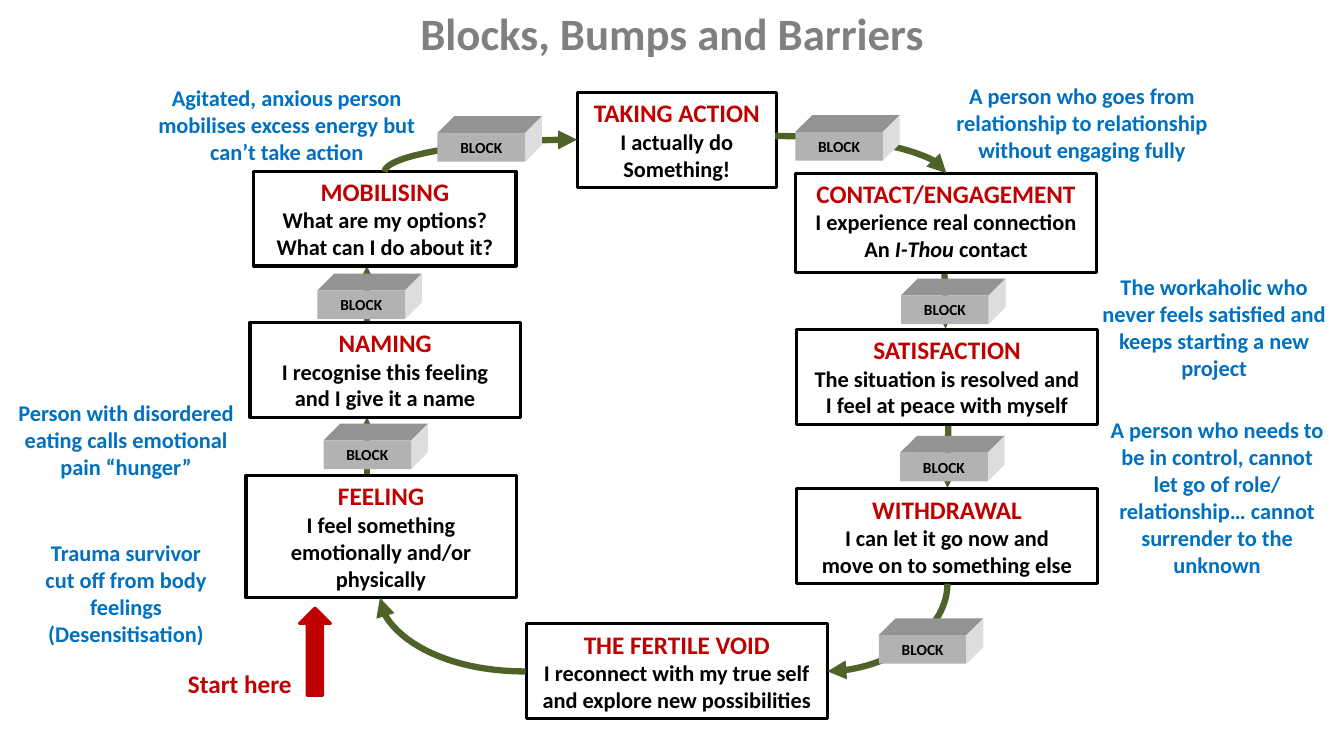
import pptx
import pptx.util
import pptx.dml.color
import pptx.enum.shapes
import pptx.enum.text
import pptx.oxml
import pptx.oxml.ns

Pt = pptx.util.Pt
SHAPE = pptx.enum.shapes.MSO_SHAPE
LINK = pptx.enum.shapes.MSO_CONNECTOR
ALIGN = pptx.enum.text.PP_ALIGN
ANCHOR = pptx.enum.text.MSO_ANCHOR
NO_FIT = pptx.enum.text.MSO_AUTO_SIZE.NONE

RED, BLUE, GREEN, GREY, BLACK, WHITE = "C00000", "0070C0", "4F6228", "808080", "000000", "FFFFFF"
FRONT, TOP, SIDE = "B2B2B2", "939393", "DDDDDD"

TITLE = "Blocks, Bumps and Barriers"
STAGES = [
    ((375.8, 445.7, 215.3, 67.7), "THE FERTILE VOID",
     [("I reconnect with my true self",), ("and explore new possibilities",)]),
    ((175.7, 339.8, 193, 87.1), "FEELING", [("I feel something emotionally and/or physically",)]),
    ((178.6, 230.4, 193, 67.7), "NAMING", [("I recognise this feeling",), ("and I give it a name",)]),
    ((181.4, 122.4, 187.2, 67.7), "MOBILISING", [("What are my options?",), ("What can I do about it?",)]),
    ((412.6, 66.2, 141.8, 67.7), "TAKING ACTION", [("I actually do",), ("Something!",)]),
    ((568.1, 123.8, 215.3, 70.6), "CONTACT/ENGAGEMENT",
     [("I experience real connection",), ("An ", "I-Thou ", "contact")]),
    ((568.8, 235.4, 215.3, 67.7), "SATISFACTION",
     [("The situation is resolved and",), ("I feel at peace with myself",)]),
    ((568.8, 349.2, 215.3, 67.7), "WITHDRAWAL",
     [("I can let it go now and",), ("move on to something else",)]),
]
EXAMPLES = [
    ((2.2, 381.6, 175.7, 85), ["Trauma survivor", "cut off from body feelings", "(Desensitisation)"]),
    ((2.2, 281.5, 175.7, 65.5), ["Person with disordered eating calls emotional pain “hunger”"]),
    ((96.5, 56.9, 216.7, 65.5), ["Agitated, anxious person mobilises excess energy but can’t take action"]),
    ((669.6, 55.4, 206.6, 65.5), ["A person who goes from relationship to relationship without engaging fully"]),
    ((776.9, 191.5, 180.7, 85), ["The workaholic who never feels satisfied and keeps starting a new project"]),
    ((785.5, 293.8, 167.8, 123.8),
     ["A person who needs to be in control, cannot let go of role/ relationship… cannot surrender to the unknown"]),
]
STRAIGHT = [
    (674.6, 190.8, 675.4, 234.7),
    (677.5, 292.3, 676.8, 348.5),
    (262.1, 349.2, 262.1, 298.1),
    (262.1, 238.3, 262.1, 190.1),
]
CURVES = [
    ((271.4, 427, 104, 52.6), 180, False),
    ((602.6, 405.4, 62.6, 85.7), 90, False),
    ((331.9, 42.5, 23, 137.5), 90, True),
    ((553.7, 97.2, 122.4, 26.6), 0, False),
]
BLOCKS = [(231.1, 314.6), (226.8, 207.4), (312.5, 95), (568.1, 94.3), (643.7, 211), (643, 323.3), (627.8, 453.6)]
BLOCK_W, BLOCK_H, DEPTH = 62.6, 20.5, 12


def rgb(value):
    return pptx.dml.color.RGBColor.from_string(value)


def paint(shape, fill, line=None, width=0):
    shape.shadow.inherit = False
    shape.fill.solid()
    shape.fill.fore_color.rgb = rgb(fill)
    if line:
        shape.line.color.rgb = rgb(line)
        shape.line.width = Pt(width)
    else:
        shape.line.fill.background()


def write(tf, lines, anchor=ANCHOR.TOP, wrap=True):
    tf.word_wrap = wrap
    tf.auto_size = NO_FIT
    tf.vertical_anchor = anchor
    for i, (runs, size, color) in enumerate(lines):
        p = tf.paragraphs[0] if i == 0 else tf.add_paragraph()
        p.alignment = ALIGN.CENTER
        for j, text in enumerate(runs):
            r = p.add_run()
            r.text = text
            r.font.name = "Calibri"
            r.font.size = Pt(size)
            r.font.bold = True
            r.font.italic = j % 2 == 1
            r.font.color.rgb = rgb(color)


def add_arrow(s, kind, x1, y1, x2, y2):
    c = s.shapes.add_connector(kind, Pt(x1), Pt(y1), Pt(x2), Pt(y2))
    c.line.color.rgb = rgb(GREEN)
    c.line.width = Pt(4.5)
    ln = c.line._get_or_add_ln()
    ln.append(pptx.oxml.parse_xml('<a:tailEnd %s type="triangle"/>' % pptx.oxml.ns.nsdecls("a")))
    c.element.spPr.append(pptx.oxml.parse_xml("<a:effectLst %s/>" % pptx.oxml.ns.nsdecls("a")))
    return c


def add_curve(s, box, angle, flipped):
    x, y, w, h = box
    spPr = add_arrow(s, LINK.CURVE, x, y, x + w, y + h).element.spPr
    spPr.find(pptx.oxml.ns.qn("a:prstGeom")).set("prst", "curvedConnector2")
    xfrm = spPr.find(pptx.oxml.ns.qn("a:xfrm"))
    xfrm.set("rot", str(angle * 60000))
    if flipped:
        xfrm.set("flipH", "1")
        xfrm.set("flipV", "1")


def add_face(s, points, color):
    corners = [(Pt(x), Pt(y)) for x, y in points]
    builder = s.shapes.build_freeform(*corners[0])
    builder.add_line_segments(corners[1:], close=True)
    paint(builder.convert_to_shape(), color)


def add_block(s, x, y):
    right, bottom = x + BLOCK_W, y + BLOCK_H
    back = (right + DEPTH, y - DEPTH)
    add_face(s, [(x, y), (x + DEPTH, y - DEPTH), back, (right, y)], TOP)
    add_face(s, [(right, y), back, (right + DEPTH, bottom - DEPTH), (right, bottom)], SIDE)
    sp = add_shape(s, SHAPE.RECTANGLE, (x, y, BLOCK_W, BLOCK_H))
    paint(sp, FRONT)
    write(sp.text_frame, [(("BLOCK",), 11, BLACK)], ANCHOR.MIDDLE)


def add_shape(s, kind, box):
    return s.shapes.add_shape(kind, *map(Pt, box))


def add_text(s, box, lines, wrap=True):
    write(s.shapes.add_textbox(*map(Pt, box)).text_frame, lines, wrap=wrap)


def main():
    prs = pptx.Presentation()
    prs.slide_width, prs.slide_height = Pt(960), Pt(540)
    s = prs.slides.add_slide(prs.slide_layouts[5])
    title = s.shapes.title
    title.left, title.top, title.width, title.height = map(Pt, (291.6, 0.7, 377.3, 46.1))
    write(title.text_frame, [((TITLE,), 32, GREY)], wrap=False)

    for ends in STRAIGHT:
        add_arrow(s, LINK.STRAIGHT, *ends)
    for box, name, lines in STAGES:
        sp = add_shape(s, SHAPE.RECTANGLE, box)
        paint(sp, WHITE, BLACK, 2.25)
        write(sp.text_frame, [((name,), 18, RED)] + [(runs, 16, BLACK) for runs in lines])
    for curve in CURVES:
        add_curve(s, *curve)

    start = add_shape(s, SHAPE.UP_ARROW, (213.8, 434.2, 22.3, 62.6))
    paint(start, RED, RED, 2)
    add_text(s, (126.7, 473.8, 89.3, 28.8), [(("Start here",), 18, RED)], wrap=False)

    for corner in BLOCKS:
        add_block(s, *corner)
    for box, lines in EXAMPLES:
        add_text(s, box, [((text,), 16, BLUE) for text in lines])
    prs.save("out.pptx")


if __name__ == "__main__":
    main()
